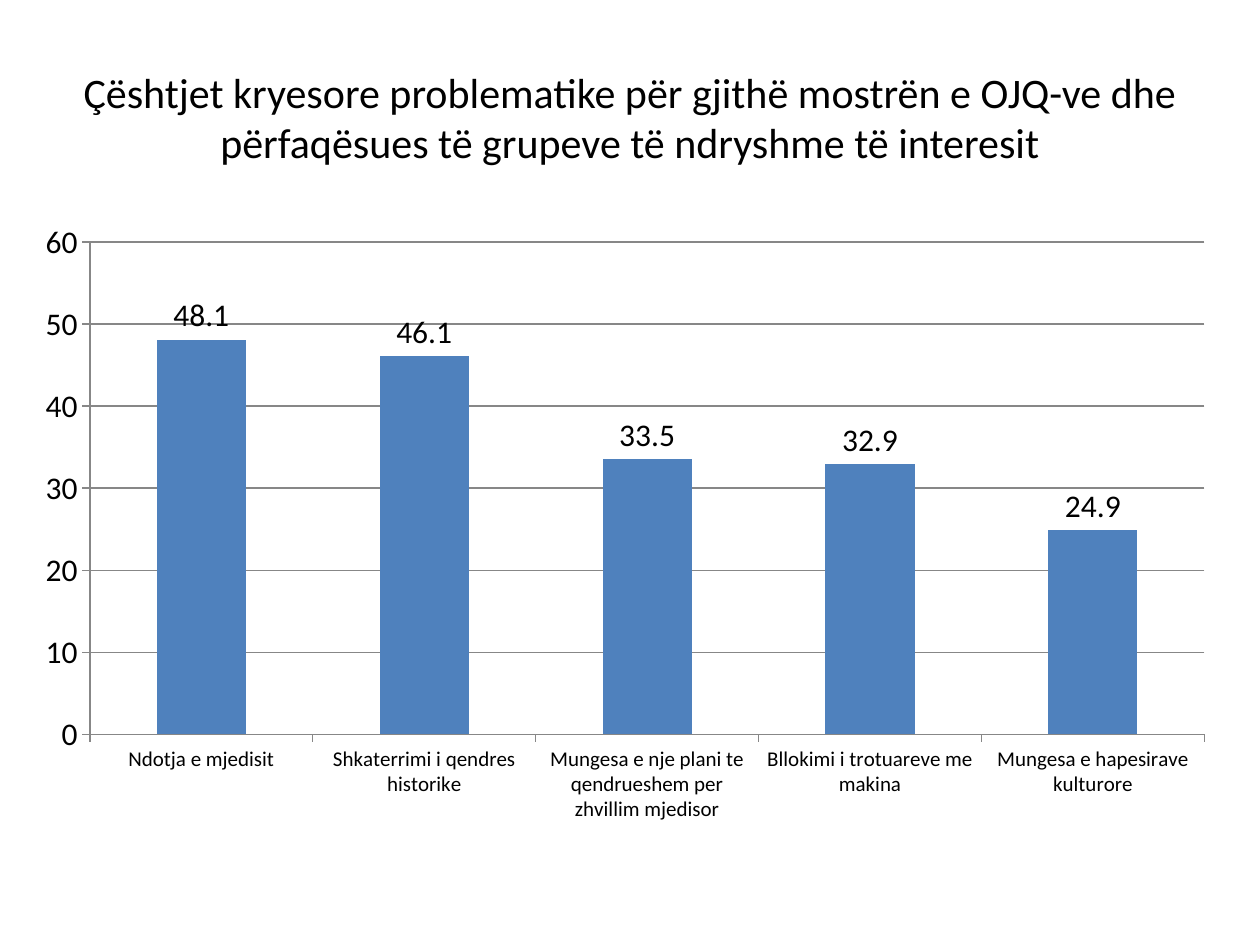
from pptx import Presentation
from pptx.chart.data import CategoryChartData
from pptx.dml.color import RGBColor
from pptx.enum.chart import XL_CHART_TYPE, XL_LABEL_POSITION, XL_TICK_MARK
from pptx.enum.text import MSO_ANCHOR, PP_ALIGN
from pptx.util import Inches, Pt

COLUMN = XL_CHART_TYPE.COLUMN_CLUSTERED
OUT_END = XL_LABEL_POSITION.OUTSIDE_END
OUTSIDE, NO_TICK = XL_TICK_MARK.OUTSIDE, XL_TICK_MARK.NONE
MIDDLE, CENTER = MSO_ANCHOR.MIDDLE, PP_ALIGN.CENTER

COLORS = {"text": "000000", "bar": "4F81BD", "line": "878787"}
TITLE = ("Çështjet kryesore problematike për gjithë mostrën e OJQ-ve dhe "
         "përfaqësues të grupeve të ndryshme të interesit")
ISSUES = {
    "Ndotja e mjedisit": 48.1,
    "Shkaterrimi i qendres historike": 46.1,
    "Mungesa e nje plani te qendrueshem per zhvillim mjedisor": 33.5,
    "Bllokimi i trotuareve me makina": 32.9,
    "Mungesa e hapesirave kulturore": 24.9,
}


class Deck:
    """Holds the style and the current slide."""

    def __init__(self, slide, face="Calibri"):
        self.slide = slide
        self.face = face

    def color(self, name):
        return RGBColor.from_string(COLORS[name])

    def style(self, font, size):
        font.name = self.face
        font.size = Pt(size)
        font.bold = False
        font.color.rgb = self.color("text")

    def title(self, text, box, size):
        frame = self.slide.shapes.add_textbox(*map(Inches, box)).text_frame
        frame.word_wrap = True
        frame.vertical_anchor = MIDDLE
        frame.text = text
        para = frame.paragraphs[0]
        para.alignment = CENTER
        self.style(para.runs[0].font, size)

    def line(self, form):
        form.line.color.rgb = self.color("line")
        form.line.width = Pt(0.75)

    def chart(self, values, box, size, small):
        data = CategoryChartData()
        data.categories = list(values)
        data.add_series("Series 1", list(values.values()))
        chart = self.slide.shapes.add_chart(
            COLUMN, *map(Inches, box), data).chart
        chart.has_title = False
        chart.has_legend = False
        self.style(chart.font, size)

        plot = chart.plots[0]
        plot.gap_width = 150
        plot.vary_by_categories = False
        bars = plot.series[0]
        bars.format.fill.solid()
        bars.format.fill.fore_color.rgb = self.color("bar")
        labels = bars.data_labels
        labels.show_value = True
        labels.position = OUT_END
        self.style(labels.font, size)

        for axis, points in ((chart.category_axis, small),
                             (chart.value_axis, size)):
            axis.major_tick_mark = OUTSIDE
            axis.minor_tick_mark = NO_TICK
            self.line(axis.format)
            self.style(axis.tick_labels.font, points)
        scale = chart.value_axis
        scale.minimum_scale, scale.maximum_scale = 0, 60
        scale.major_unit = 10
        scale.has_major_gridlines = True
        self.line(scale.major_gridlines.format)


def main():
    show = Presentation()
    show.slide_width, show.slide_height = Inches(10), Inches(7.5)
    deck = Deck(show.slides.add_slide(show.slide_layouts[6]))
    deck.title(TITLE, (0.5, 0.3, 9, 1.25), 24)
    deck.chart(ISSUES, (0.17, 1.67, 9.58, 4.95), 18, 12)
    show.save("out.pptx")


if __name__ == "__main__":
    main()
